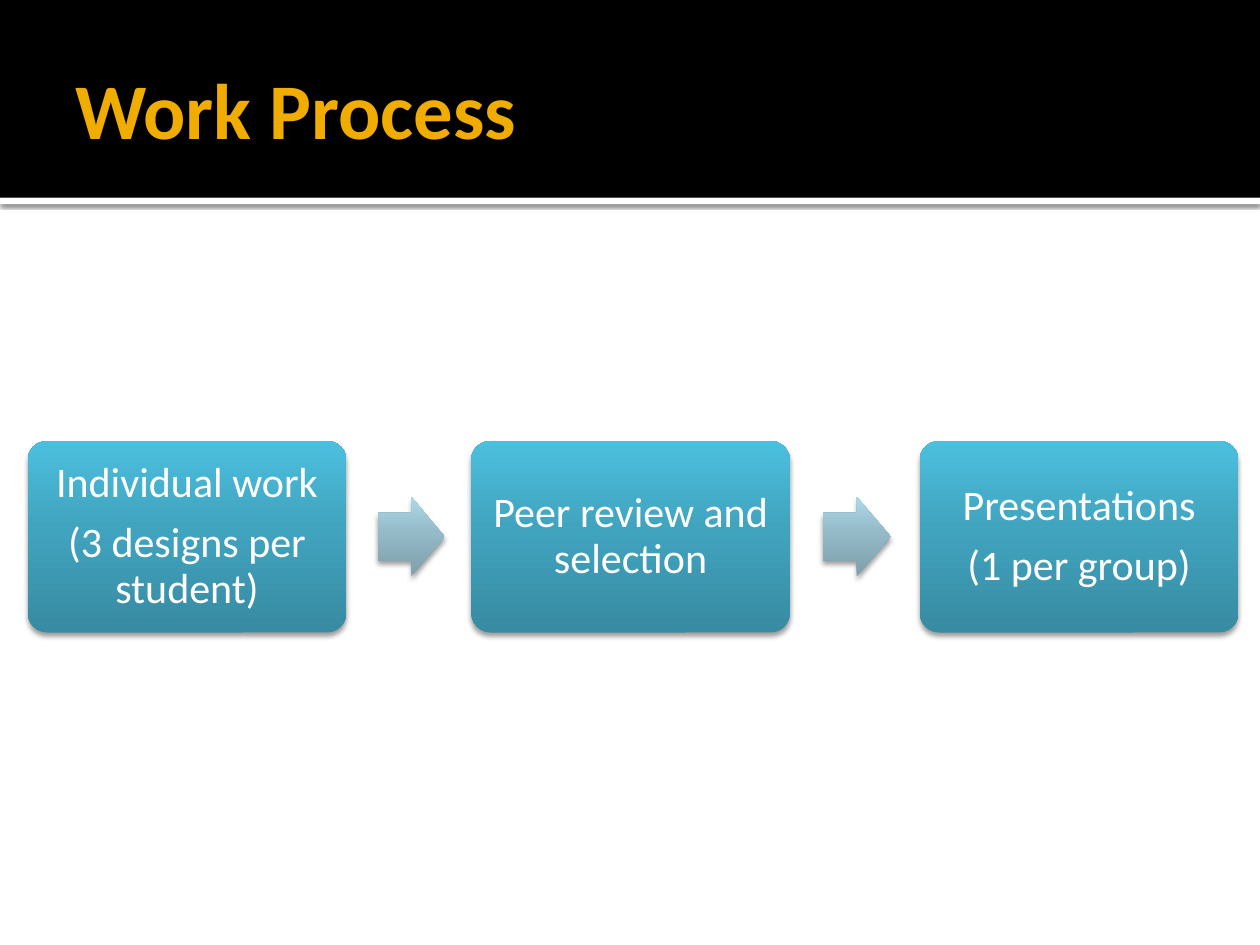
import copy

from lxml import etree
from pptx import Presentation, util as u
from pptx.dml.color import RGBColor
from pptx.enum import shapes, text
from pptx.oxml.ns import qn

# Content
TITLE = "Work Process"
STEPS = [
    (0.22, ["Individual work", "(3 designs per student)"]),
    (3.74, ["Peer review and selection"]),
    (7.3, ["Presentations", "(1 per group)"]),
]
ARROWS = [(3, 0.53), (6.53, 0.54)]  # left, width

# Style
FONT = "Calibri"
BOX_STOPS = [(0, "378BA2"), (0.55, "41A4BF"), (1, "4BBFDE")]
ARROW_STOPS = [(0, "7E9EAA"), (0.55, "94BAC7"), (1, "ADD9E8")]
BAR_SHADOW = (60, 2.5, 0.8)  # opacity %, blur pt, distance pt
STEP_SHADOW = (38, 3.1, 2)
BOX_WIDTH, BOX_HEIGHT, BOX_TOP = 2.53, 1.52, 3.5
ARROW_HEIGHT = 0.63


def color(value):
    return RGBColor.from_string(value)


def add_shape(slide, kind, left, top, width, height):
    shape = slide.shapes.add_shape(kind, *map(u.Inches, (left, top, width, height)))
    shape.line.fill.background()
    shape.shadow.inherit = False
    return shape


def fill_solid(shape, value):
    shape.fill.solid()
    shape.fill.fore_color.rgb = color(value)


def fill_gradient(shape, stops):
    """Run the stops from the bottom edge to the top edge."""
    shape.fill.gradient()
    shape.fill.gradient_angle = 90
    stop_list = shape._element.spPr.find(".//" + qn("a:gsLst"))
    stop_list.append(copy.deepcopy(stop_list[-1]))
    for stop, (position, value) in zip(shape.fill.gradient_stops, stops):
        stop.position = position
        stop.color.rgb = color(value)


def add_shadow(shape, opacity, blur, distance):
    effects = shape._element.spPr.find(qn("a:effectLst"))
    shadow = etree.SubElement(
        effects, qn("a:outerShdw"), blurRad=str(u.Pt(blur)),
        dist=str(u.Pt(distance)), dir="5400000", algn="ctr", rotWithShape="0")
    black = etree.SubElement(shadow, qn("a:srgbClr"), val="000000")
    etree.SubElement(black, qn("a:alpha"), val=str(opacity * 1000))


def write(shape, lines, size, value, margins):
    frame = shape.text_frame
    frame.word_wrap = True
    frame.vertical_anchor = text.MSO_ANCHOR.MIDDLE
    (frame.margin_left, frame.margin_top,
     frame.margin_right, frame.margin_bottom) = map(u.Inches, margins)
    frame.text = "\n".join(lines)
    for para in frame.paragraphs:
        para.font.name = FONT
        para.font.size = u.Pt(size)
        para.font.color.rgb = color(value)
    return frame.paragraphs


deck = Presentation()
deck.slide_width, deck.slide_height = u.Inches(10), u.Inches(7.5)
page = deck.slides.add_slide(deck.slide_layouts[6])

# Header band and the white strip below it
strip = add_shape(page, shapes.MSO_SHAPE.RECTANGLE, 0, 1.57, 10, 0.05)
fill_solid(strip, "FFFFFF")
add_shadow(strip, *BAR_SHADOW)
band = add_shape(page, shapes.MSO_SHAPE.RECTANGLE, 0, 0, 10, 1.57)
fill_solid(band, "000000")

# Title
title = page.shapes.add_textbox(*map(u.Inches, (0.5, 0.17, 9, 1.37)))
for para in write(title, [TITLE], 45, "F0AD00", (0.1, 0.05, 0.05, 0.05)):
    para.font.bold = True

# Process steps
for left, lines in STEPS:
    box = add_shape(page, shapes.MSO_SHAPE.ROUNDED_RECTANGLE,
                    left, BOX_TOP, BOX_WIDTH, BOX_HEIGHT)
    box.adjustments[0] = 0.1
    fill_gradient(box, BOX_STOPS)
    add_shadow(box, *STEP_SHADOW)
    for para in write(box, lines, 24, "FFFFFF", (0.13, 0.13, 0.13, 0.13)):
        para.alignment = text.PP_ALIGN.CENTER
        para.line_spacing = 0.9
        para.space_after = u.Pt(8.4)

# Arrows, centred on the height of the steps
arrow_top = BOX_TOP + (BOX_HEIGHT - ARROW_HEIGHT) / 2
for left, width in ARROWS:
    arrow = add_shape(page, shapes.MSO_SHAPE.RIGHT_ARROW,
                      left, arrow_top, width, ARROW_HEIGHT)
    arrow.adjustments[0], arrow.adjustments[1] = 0.6, 0.5
    fill_gradient(arrow, ARROW_STOPS)
    add_shadow(arrow, *STEP_SHADOW)

deck.save("out.pptx")
